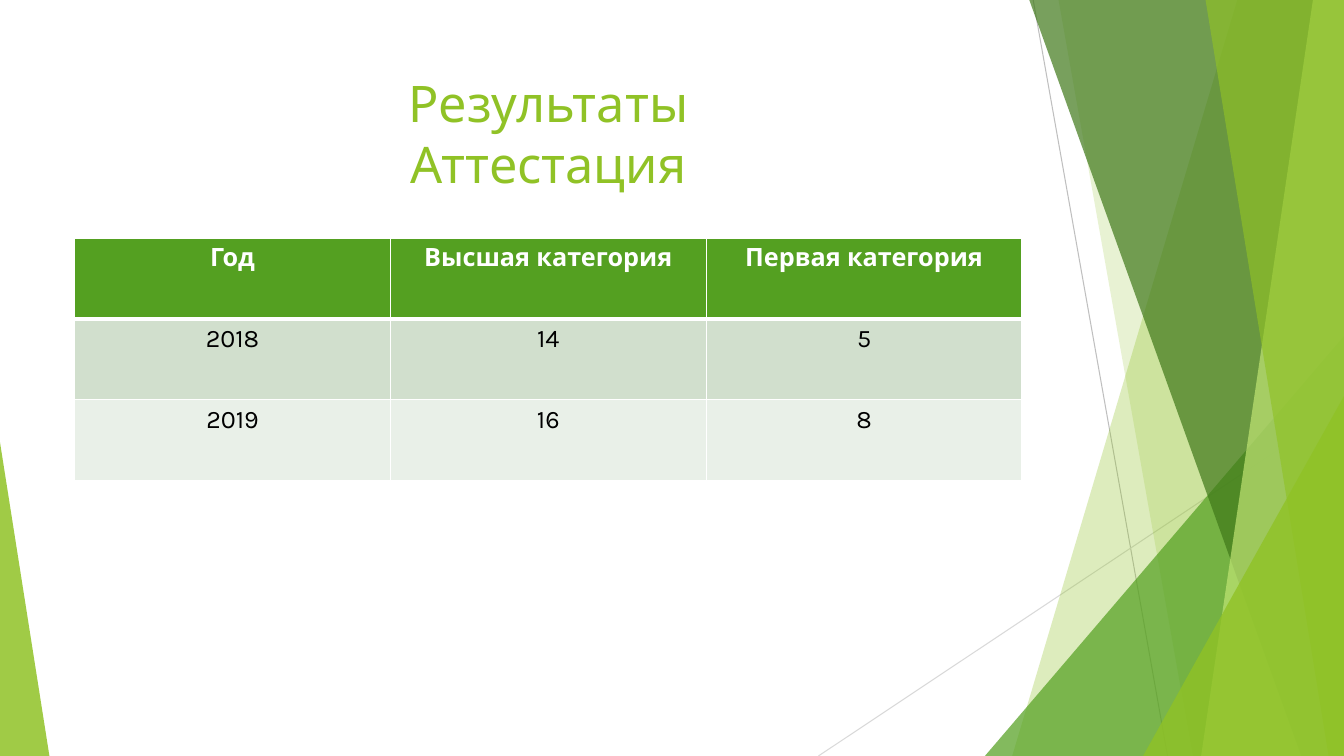
from pptx import Presentation
from pptx.dml.color import RGBColor
from pptx.enum.shapes import MSO_CONNECTOR, MSO_SHAPE
from pptx.enum.text import MSO_ANCHOR, PP_ALIGN
from pptx.oxml.ns import qn
from pptx.util import Pt
from lxml.etree import SubElement

WIDTH, HEIGHT = 960, 540
BLEED = -0.72
FONT = "Karla"
WHITE = RGBColor(0xFF, 0xFF, 0xFF)
BLACK = RGBColor(0x00, 0x00, 0x00)
LIME = RGBColor(0x90, 0xC2, 0x26)
PALE_LIME = RGBColor(0xC0, 0xE4, 0x74)
GREEN = RGBColor(0x54, 0xA0, 0x21)
DARK_GREEN = RGBColor(0x3F, 0x78, 0x19)
BAND_DARK = RGBColor(0xD1, 0xDF, 0xCD)
BAND_LIGHT = RGBColor(0xE9, 0xF0, 0xE8)
GREY = RGBColor(0xBF, 0xBF, 0xBF)
LIGHT_GREY = RGBColor(0xD9, 0xD9, 0xD9)

RESULTS = [
    ("Год", "Высшая категория", "Первая категория"),
    ("2018", "14", "5"),
    ("2019", "16", "8"),
]
ROW_FILLS = [GREEN, BAND_DARK, BAND_LIGHT]


def format_text(paragraph, color, **values):
    """Centre a paragraph and apply the font values to its runs."""
    paragraph.alignment = PP_ALIGN.CENTER
    for run in paragraph.runs:
        run.font.color.rgb = color
        for name, value in {"name": FONT, **values}.items():
            setattr(run.font, name, value)


def paint(shape, color, opacity):
    """Give a shape a translucent fill without outline or shadow."""
    shape.shadow.inherit = False
    shape.fill.solid()
    shape.fill.fore_color.rgb = color
    shape.line.fill.background()
    color_element = shape.element.spPr.find(qn("a:solidFill")).find(qn("a:srgbClr"))
    SubElement(color_element, qn("a:alpha"), val=str(opacity * 1000))


def add_thin_line(slide, start, end, color):
    """Draw a thin straight line between two points."""
    line = slide.shapes.add_connector(
        MSO_CONNECTOR.STRAIGHT, *(Pt(value) for value in start + end))
    line.line.color.rgb = color
    line.line.width = Pt(0.75)
    SubElement(line.element.spPr, qn("a:effectLst"))


def add_facet(slide, top_left, bottom_left, color, opacity):
    """Fill the area from a slanted left edge to the right slide edge."""
    builder = slide.shapes.build_freeform(Pt(top_left), Pt(BLEED))
    corners = [(WIDTH, BLEED), (WIDTH, HEIGHT), (bottom_left, HEIGHT)]
    builder.add_line_segments([(Pt(x), Pt(y)) for x, y in corners], close=True)
    paint(builder.convert_to_shape(), color, opacity)


def add_corner(slide, left, top, width, apex, color, opacity):
    """Place a triangle that stands on the bottom edge."""
    triangle = slide.shapes.add_shape(
        MSO_SHAPE.ISOSCELES_TRIANGLE, Pt(left), Pt(top), Pt(width), Pt(HEIGHT - top))
    triangle.adjustments[0] = apex
    paint(triangle, color, opacity)


def add_decoration(slide):
    """Build the green facets at the slide edges."""
    add_thin_line(slide, (738, 0), (834, HEIGHT), GREY)
    add_thin_line(slide, (WIDTH, 290), (584.6, HEIGHT), LIGHT_GREY)
    add_facet(slide, 884, 723, LIME, 30)
    add_facet(slide, 756, 852, LIME, 20)
    add_corner(slide, 703.5, 240, WIDTH - 703.5, 1, GREEN, 72)
    add_facet(slide, 735, 929.5, DARK_GREEN, 70)
    add_facet(slide, 938, 858, PALE_LIME, 70)
    add_facet(slide, 861, 949, LIME, 65)
    add_corner(slide, 816.5, 283, WIDTH - 816.5, 1, LIME, 80)
    add_corner(slide, 0, 316, 35.3, 0, LIME, 85)


def add_title(slide, left, top, width, height):
    """Fill the title placeholder in the given box."""
    title = slide.shapes.title
    box = {"left": left, "top": top, "width": width, "height": height}
    for name, value in box.items():
        setattr(title, name, Pt(value))
    title.text_frame.text = "Результаты\vАттестация"
    title.text_frame.vertical_anchor = MSO_ANCHOR.TOP
    format_text(title.text_frame.paragraphs[0], LIME, size=Pt(36))


def add_borders(cell, widths):
    """Draw white cell borders with a width for each side."""
    properties = cell._tc.get_or_add_tcPr()
    for side, width in widths.items():
        border = SubElement(properties, qn(f"a:ln{side}"), w=str(Pt(width)))
        fill = SubElement(border, qn("a:solidFill"))
        SubElement(fill, qn("a:srgbClr"), val=str(WHITE))


def add_results_table(slide, left, top, width, height):
    """Build the table of results in the given box."""
    table = slide.shapes.add_table(
        len(RESULTS), len(RESULTS[0]), Pt(left), Pt(top), Pt(width), Pt(height)).table
    for column in table.columns:
        column.width = Pt(width / len(RESULTS[0]))
    for index, values in enumerate(RESULTS):
        table.rows[index].height = Pt(height / len(RESULTS))
        header = index == 0
        borders = {"L": 1, "R": 1, "T": 3 if index == 1 else 1, "B": 3 if header else 1}
        for cell, value in zip(table.rows[index].cells, values):
            add_borders(cell, borders)
            cell.fill.solid()
            cell.fill.fore_color.rgb = ROW_FILLS[index]
            cell.text = value
            format_text(cell.text_frame.paragraphs[0], WHITE if header else BLACK,
                        size=Pt(18), bold=header)


def main():
    """Create the presentation and save it."""
    presentation = Presentation()
    presentation.slide_width = Pt(WIDTH)
    presentation.slide_height = Pt(HEIGHT)
    slide = presentation.slides.add_slide(presentation.slide_layouts[5])
    add_decoration(slide)
    add_title(slide, 53.3, 48, 676.8, 104)
    add_results_table(slide, 53.3, 170, 676.8, 173.4)
    presentation.save("out.pptx")


if __name__ == "__main__":
    main()
